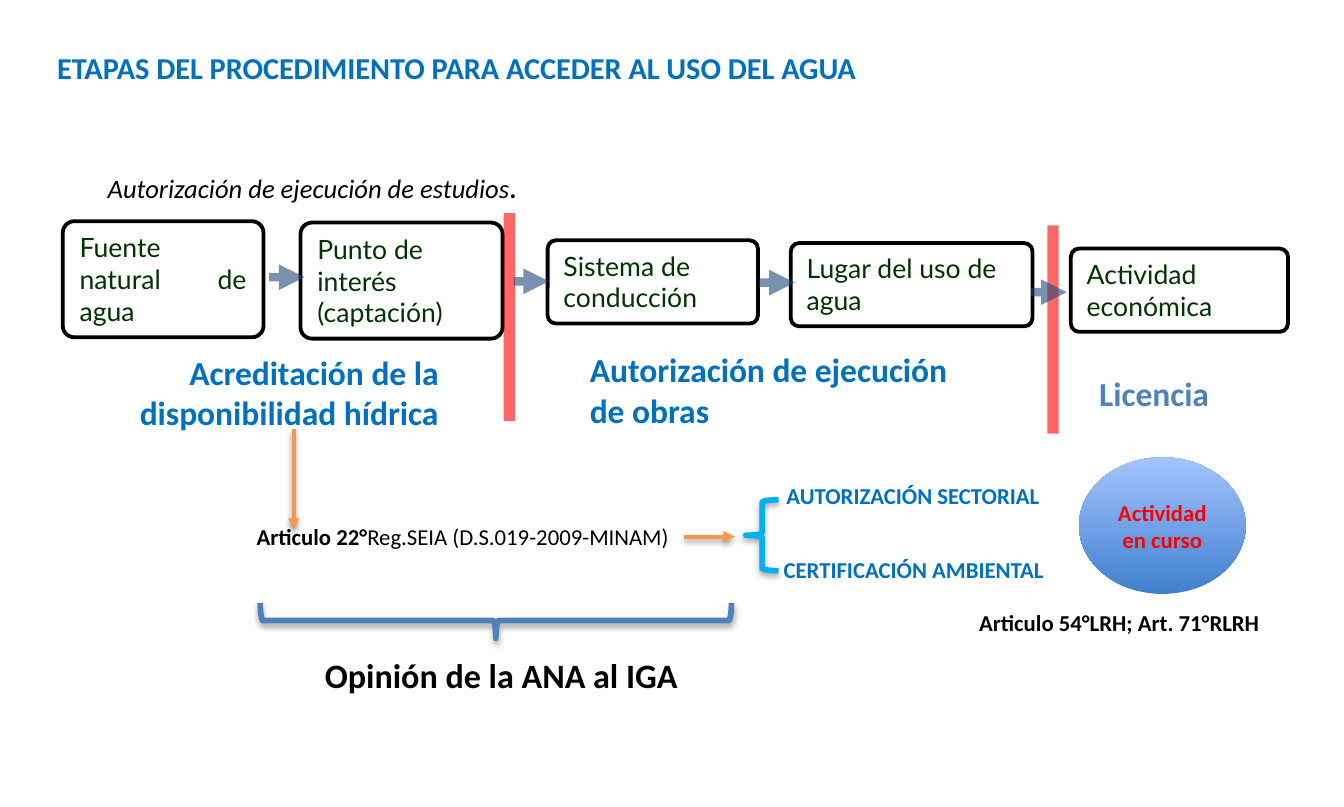
from dataclasses import dataclass

from lxml import etree
from pptx import Presentation
from pptx.dml.color import RGBColor
from pptx.enum.shapes import MSO_CONNECTOR, MSO_SHAPE
from pptx.enum.text import MSO_ANCHOR, MSO_AUTO_SIZE, PP_ALIGN
from pptx.oxml.ns import qn
from pptx.util import Inches, Pt

LEFT, RIGHT = PP_ALIGN.LEFT, PP_ALIGN.RIGHT
CENTER, JUSTIFY = PP_ALIGN.CENTER, PP_ALIGN.JUSTIFY
TOP, MIDDLE = MSO_ANCHOR.TOP, MSO_ANCHOR.MIDDLE
GROW, FIXED = MSO_AUTO_SIZE.SHAPE_TO_FIT_TEXT, MSO_AUTO_SIZE.NONE
ROUNDED, OVAL, BRACE = MSO_SHAPE.ROUNDED_RECTANGLE, MSO_SHAPE.OVAL, MSO_SHAPE.RIGHT_BRACE
STRAIGHT = MSO_CONNECTOR.STRAIGHT

WIDTH, HEIGHT = 9.84, 5.91
COLUMNS, ROWS = 98.4, 59.1


@dataclass(frozen=True)
class Style:
    size: float
    color: str
    bold: bool = True
    italic: bool = False
    font: str = "Calibri"


@dataclass(frozen=True)
class Theme:
    paper: str = "FFFFFF"
    ink: str = "000000"
    divider: str = "FF0000"
    flow: str = "1F497D"
    pointer: str = "F79646"
    opinion_brace: str = "4F81BD"
    permit_brace: str = "00B0F0"
    oval: tuple = ("3F80CE", "A4C4FF")
    title: Style = Style(16, "0070C0")
    stage: Style = Style(14, "003300", bold=False, font="Lato")
    phase: Style = Style(17.7, "0070C0")
    licence: Style = Style(17.7, "4F81BD")
    study: Style = Style(14, "000000", bold=False, italic=True)
    study_stop: Style = Style(14, "000000", italic=True)
    opinion: Style = Style(18, "000000")
    current: Style = Style(12, "FF0000")
    permit: Style = Style(12, "0070C0")
    law: Style = Style(12, "000000")
    rule: Style = Style(12, "000000", bold=False)


class Board:
    """Draws on one slide, with lengths in grid columns and rows."""

    def __init__(self, theme):
        self.theme = theme
        self.deck = Presentation()
        self.deck.slide_width, self.deck.slide_height = Inches(WIDTH), Inches(HEIGHT)
        self.slide = self.deck.slides.add_slide(self.deck.slide_layouts[6])

    def place(self, *lengths):
        units = (WIDTH / COLUMNS, HEIGHT / ROWS) * 2
        return [Inches(length * unit) for length, unit in zip(lengths, units)]

    def effects(self, item, alpha=None):
        """Clears the inherited shadow, or sets a soft one below the item."""
        effect_list = etree.SubElement(item._element.spPr, qn("a:effectLst"))
        if alpha:
            shadow = etree.SubElement(effect_list, qn("a:outerShdw"), blurRad="40000",
                                      dist="22000", dir="5400000", rotWithShape="0")
            color = etree.SubElement(shadow, qn("a:srgbClr"), val=self.theme.ink)
            etree.SubElement(color, qn("a:alpha"), val=str(alpha * 1000))

    def fill_text(self, frame, paragraphs, align, anchor, size_rule, wrap=True):
        frame.word_wrap, frame.auto_size = wrap, size_rule
        frame.vertical_anchor = anchor
        for index, runs in enumerate(paragraphs):
            paragraph = frame.add_paragraph() if index else frame.paragraphs[0]
            paragraph.alignment = align
            for words, style in runs:
                run = paragraph.add_run()
                run.text = words
                font = run.font
                font.name, font.size = style.font, Pt(style.size)
                font.bold, font.italic = style.bold, style.italic
                font.color.rgb = RGBColor.from_string(style.color)

    def text(self, area, *paragraphs, align=LEFT, anchor=TOP, size_rule=GROW, wrap=True):
        box = self.slide.shapes.add_textbox(*self.place(*area))
        self.fill_text(box.text_frame, paragraphs, align, anchor, size_rule, wrap)

    def stage(self, area, words, align=LEFT):
        box = self.slide.shapes.add_shape(ROUNDED, *self.place(*area))
        box.adjustments[0] = 0.1
        box.fill.solid()
        box.fill.fore_color.rgb = RGBColor.from_string(self.theme.paper)
        self.outline(box, self.theme.ink, 2)
        self.effects(box)
        self.fill_text(box.text_frame, [[(words, self.theme.stage)]], align, TOP, GROW)

    def outline(self, item, color, width):
        item.line.color.rgb = RGBColor.from_string(color)
        item.line.width = Pt(width)

    def line(self, start, end, color, width, alpha=None, arrow=False, shadow=None):
        link = self.slide.shapes.add_connector(STRAIGHT, *self.place(*start, *end))
        self.outline(link, color, width)
        stroke = link._element.spPr.find(qn("a:ln"))
        if alpha:
            etree.SubElement(stroke.find(".//" + qn("a:srgbClr")), qn("a:alpha"),
                             val=str(alpha * 1000))
        if arrow:
            etree.SubElement(stroke, qn("a:tailEnd"), type="triangle")
        self.effects(link, shadow)

    def brace(self, area, turn, color):
        brace = self.slide.shapes.add_shape(BRACE, *self.place(*area))
        brace.adjustments[0], brace.adjustments[1] = 0.08, 0.5
        brace.rotation = turn
        brace.fill.background()
        self.outline(brace, color, 3)
        self.effects(brace, 35)

    def oval(self, area, words, style):
        oval = self.slide.shapes.add_shape(OVAL, *self.place(*area))
        oval.fill.gradient()
        oval.fill.gradient_angle = 90
        for stop, color, position in zip(oval.fill.gradient_stops, self.theme.oval, (0, 1)):
            stop.color.rgb = RGBColor.from_string(color)
            stop.position = position
        oval.line.fill.background()
        self.effects(oval)
        self.fill_text(oval.text_frame, [[(words, style)]], CENTER, MIDDLE, FIXED)


def main():
    theme = Theme()
    board = Board(theme)

    # Title
    board.text((3.2, 3.1, 67.5, 3.7),
               [("ETAPAS DEL PROCEDIMIENTO PARA ACCEDER AL USO DEL AGUA", theme.title)],
               anchor=MIDDLE, size_rule=FIXED)

    # Stages of water use
    for words, area, align in (
        ("Fuente natural de agua", (4.6, 16.2, 14.7, 8.5), JUSTIFY),
        ("Punto de interés (captación)", (22, 16.3, 14.8, 8.5), LEFT),
        ("Sistema de conducción", (40.1, 17.6, 15.4, 6.1), LEFT),
        ("Lugar del uso de agua", (57.9, 17.8, 17.7, 6.1), LEFT),
        ("Actividad económica", (78.4, 18.2, 15.9, 6.1), LEFT),
    ):
        board.stage(area, words, align)

    # Dividers between phases
    for column, row in ((37.3, 15.6), (77.1, 16.5)):
        board.line((column, row), (column, row + 15.25), theme.divider, 6, alpha=60)

    # Phase names
    board.text((4.3, 25.3, 28.8, 7),
               [("Acreditación de la disponibilidad hídrica", theme.phase)], align=RIGHT)
    board.text((42.2, 25.1, 32.8, 7), [("Autorización de ejecución", theme.phase)],
               [("de obras", theme.phase)], align=JUSTIFY)
    board.text((79.5, 26.8, 17, 4), [("Licencia", theme.licence)], align=JUSTIFY)
    board.text((6.9, 12.1, 44.9, 3.4),
               [("Autorización de ejecución de estudios", theme.study),
                (".", theme.study_stop)], align=JUSTIFY)

    # Flow from stage to stage
    for column, row in ((19.7, 20.3), (37.6, 20.6), (55.6, 20.7), (75.5, 21.4)):
        board.line((column, row), (column + 2.6, row), theme.flow, 4.5, alpha=60, arrow=True)

    # Opinion on the environmental instrument
    board.brace((35, 28.2, 2.6, 34.5), 90, theme.opinion_brace)
    board.text((22.8, 47.4, 28.1, 4), [("Opinión de la ANA al IGA", theme.opinion)], wrap=False)

    # Activity under way
    board.oval((79, 33.5, 12.2, 10), "Actividad en curso", theme.current)
    board.text((70.7, 44.1, 25.2, 3), [("Articulo 54°LRH; Art. 71°RLRH", theme.law)])

    # Regulation and the permits it asks for
    board.text((56.3, 34.8, 21.1, 3), [("AUTORIZACIÓN SECTORIAL", theme.permit)], align=CENTER)
    board.text((54.3, 40.2, 25.2, 3), [("CERTIFICACIÓN AMBIENTAL", theme.permit)], align=CENTER)
    board.text((17.8, 37.8, 33.9, 3), [("Articulo 22°", theme.law),
               ("Reg.SEIA (D.S.019-2009-MINAM)", theme.rule)], wrap=False)
    for start, end in (((21.5, 31.4), (21.5, 38.8)), ((50.1, 39.3), (53.8, 39.3))):
        board.line(start, end, theme.pointer, 2, arrow=True, shadow=38)
    board.brace((54.6, 36.6, 2.4, 5.2), 180, theme.permit_brace)

    board.deck.save("out.pptx")


if __name__ == "__main__":
    main()
